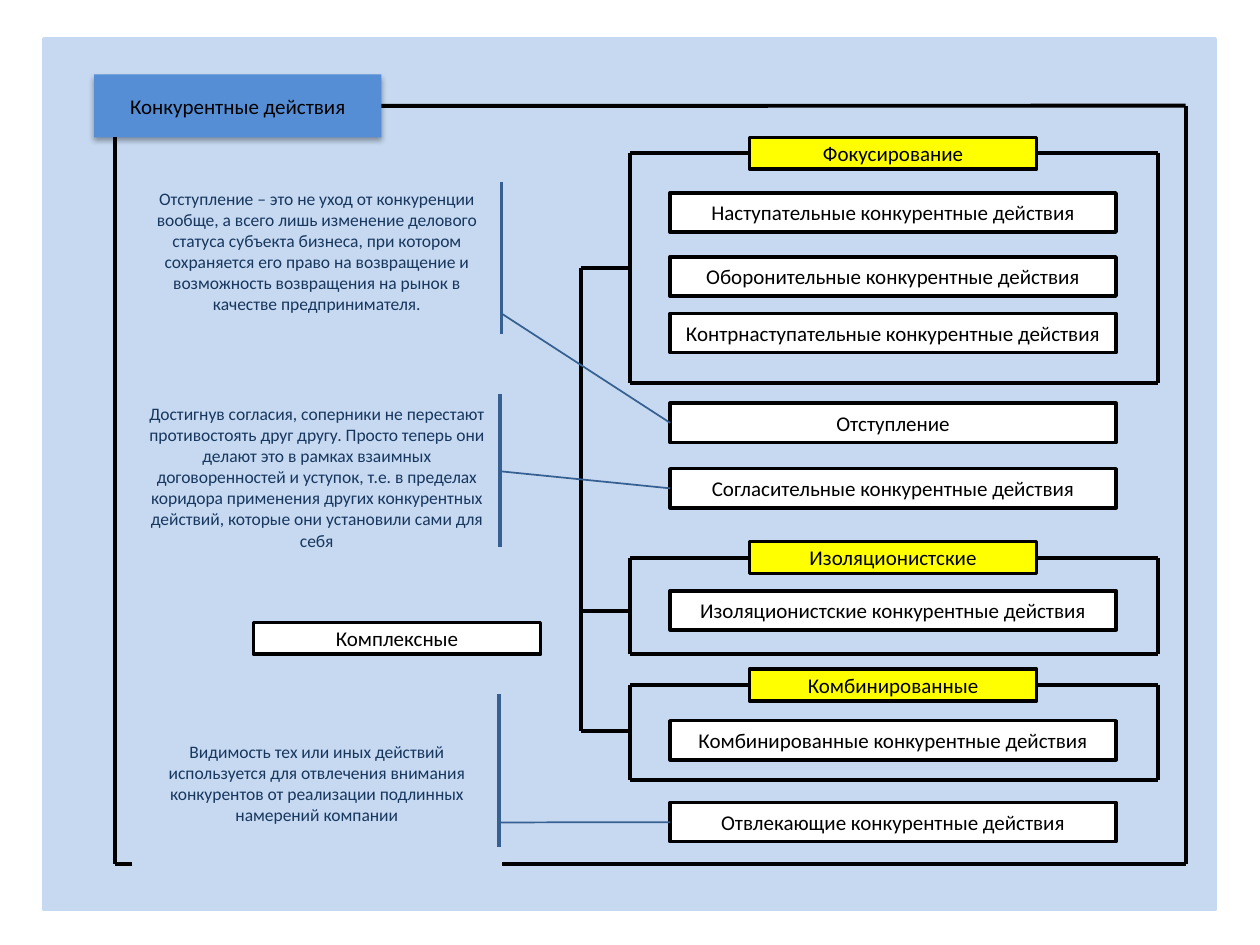
from lxml import etree
from pptx import Presentation
from pptx.dml.color import RGBColor
from pptx.enum.shapes import MSO_CONNECTOR, MSO_SHAPE
from pptx.enum.text import MSO_ANCHOR, PP_ALIGN
from pptx.oxml import parse_xml
from pptx.oxml.ns import qn
from pptx.util import Cm, Pt

RECT = MSO_SHAPE.RECTANGLE
LINE = MSO_CONNECTOR.STRAIGHT
MIDDLE = MSO_ANCHOR.MIDDLE
CENTER = PP_ALIGN.CENTER
TOP, LEFT, BOTTOM, RIGHT = range(4)

COLORS = {
    "pale": "C6D9F1", "blue": "558ED5", "yellow": "FFFF00", "white": "FFFFFF",
    "black": "000000", "navy": "17375E", "steel": "376092",
}
RGB = {name: RGBColor.from_string(code) for name, code in COLORS.items()}

SHADOW = (
    '<a:effectLst xmlns:a="http://schemas.openxmlformats.org/drawingml/2006/main">'
    '<a:outerShdw blurRad="39400" dist="23000" dir="5400000" rotWithShape="0">'
    '<a:srgbClr val="000000"><a:alpha val="35000"/></a:srgbClr>'
    '</a:outerShdw></a:effectLst>'
)

prs = Presentation()
prs.slide_width, prs.slide_height = Cm(25.4), Cm(19.05)
slide = prs.slides.add_slide(prs.slide_layouts[6])


def box(x, y, w, h, fill, edge=None, text="", size=12, ink="black"):
    shape = slide.shapes.add_shape(RECT, Cm(x), Cm(y), Cm(w), Cm(h))
    shape.shadow.inherit = False
    shape.fill.solid()
    shape.fill.fore_color.rgb = RGB[fill]
    if edge:
        shape.line.color.rgb = RGB[edge]
        shape.line.width = Pt(2)
    else:
        shape.line.fill.background()
    if text:
        frame = shape.text_frame
        frame.word_wrap = True
        frame.vertical_anchor = MIDDLE
        para = frame.paragraphs[0]
        para.alignment = CENTER
        run = para.add_run()
        run.text = text
        run.font.name = "Calibri"
        run.font.size = Pt(size)
        run.font.color.rgb = RGB[ink]
    return shape


def wire(x1, y1, x2, y2, color="black", width=2.25, start=None):
    """Draw a straight line; start is an optional (shape, side) to join."""
    line = slide.shapes.add_connector(LINE, Cm(x1), Cm(y1), Cm(x2), Cm(y2))
    line.line.color.rgb = RGB[color]
    line.line.width = Pt(width)
    etree.SubElement(line._element.spPr, qn("a:effectLst"))
    if start:
        line.begin_connect(*start)


# Background and title
box(0.89, 0.79, 23.6, 17.55, "pale", "pale")
title = box(1.9, 1.5, 5.79, 1.27, "blue", text="Конкурентные действия")
props = title._element.spPr
props.replace(props.find(qn("a:effectLst")), parse_xml(SHADOW))

# Outer frame, starting at the title
x1, x2, y1, y2 = 2.31, 23.9, 2.13, 17.42
wire(7.69, y1, x2, y1, start=(title, RIGHT))
wire(x2, y1, x2, y2)
wire(x1, y2, x2, y2)
wire(x1, 2.77, x1, y2)

# Groups: heading, top of heading, bottom of frame, height of branch
groups = [
    ("Фокусирование", 2.77, 7.72, 5.41),
    ("Изоляционистские", 10.92, 13.18, 12.32),
    ("Комбинированные", 13.49, 15.72, 14.73),
]
x1, x2, trunk = 12.7, 23.34, 11.71
for name, top, base, branch in groups:
    head = box(15.11, top, 5.79, 0.64, "yellow", "black", name)
    mid = top + 0.32
    wire(15.11, mid, x1, mid, start=(head, LEFT))
    wire(20.9, mid, x2, mid, start=(head, RIGHT))
    wire(x1, mid, x1, base)
    wire(x2, mid, x2, base)
    wire(x1, base, x2, base)
    wire(x1, branch, trunk, branch)
wire(trunk, groups[0][3], trunk, groups[-1][3])
box(5.11, 12.55, 5.79, 0.64, "white", "black", "Комплексные")

# Actions
acts = {}
for name, top in [
    ("Наступательные конкурентные действия", 3.89),
    ("Оборонительные конкурентные действия", 5.18),
    ("Контрнаступательные конкурентные действия", 6.32),
    ("Отступление", 8.13),
    ("Согласительные конкурентные действия", 9.45),
    ("Изоляционистские конкурентные действия", 11.91),
    ("Комбинированные конкурентные действия", 14.53),
    ("Отвлекающие конкурентные действия", 16.18),
]:
    acts[name] = box(13.51, top, 8.99, 0.79, "white", "black", name)

# Notes: action, top of note, bar (x, top), end of link, text
notes = [
    ("Отступление", 3.4, 10.11, 3.66, 6.32,
     "Отступление – это не уход от конкуренции вообще, а всего лишь изменение "
     "делового статуса субъекта бизнеса, при котором сохраняется его право на "
     "возвращение и возможность возвращения на рынок в качестве предпринимателя."),
    ("Согласительные конкурентные действия", 7.95, 10.08, 7.95, 9.5,
     "Достигнув согласия, соперники не перестают противостоять друг другу. "
     "Просто теперь они делают это в рамках взаимных договоренностей и уступок, "
     "т.е. в пределах коридора применения других конкурентных действий, которые "
     "они установили сами для себя"),
    ("Отвлекающие конкурентные действия", 14.12, 10.06, 14, 16.58,
     "Видимость тех или иных действий используется для отвлечения внимания "
     "конкурентов от реализации подлинных намерений компании"),
]
for name, top, x, y, end, text in notes:
    box(2.69, top, 7.39, 3.33, "pale", "pale", text, 10, "navy")
    wire(x, y, x, y + 3.07, "steel")
    act = acts[name]
    wire(13.51, act.top.cm + 0.4, x, end, "steel", 1, (act, LEFT))

prs.save("out.pptx")
